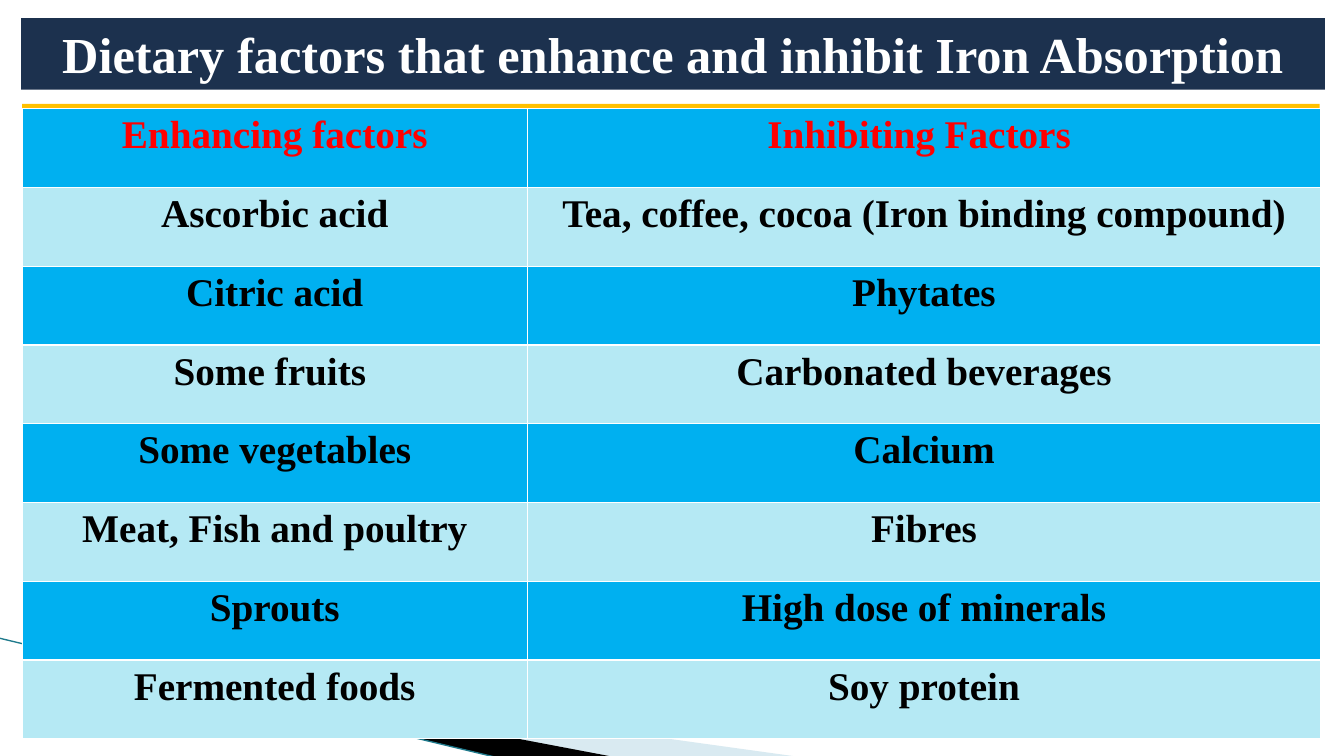
from pptx import Presentation
from pptx.dml.color import RGBColor
from pptx.enum.shapes import MSO_CONNECTOR, MSO_SHAPE
from pptx.enum.text import MSO_ANCHOR, MSO_AUTO_SIZE, PP_ALIGN
from pptx.oxml.ns import qn
from pptx.util import Inches, Pt
from lxml.etree import SubElement

FONT = "Times New Roman"
NAVY = RGBColor(0x1C, 0x31, 0x4E)
GOLD = RGBColor(0xFF, 0xC0, 0x00)
BLUE = RGBColor(0x00, 0xB0, 0xF0)
PALE = RGBColor(0xB5, 0xE9, 0xF4)
MIST = RGBColor(0xA0, 0xCB, 0xDC)
TEAL = RGBColor(0x1F, 0x7A, 0x8C)
RED = RGBColor(0xFF, 0x00, 0x00)
BLACK = RGBColor(0x00, 0x00, 0x00)
WHITE = RGBColor(0xFF, 0xFF, 0xFF)

TITLE = "Dietary factors that enhance and inhibit Iron Absorption"
FACTORS = [
    ("Enhancing factors", "Inhibiting Factors "),
    ("Ascorbic acid", "Tea, coffee, cocoa (Iron binding compound)"),
    ("Citric acid", "Phytates"),
    ("Some fruits ", "Carbonated beverages"),
    ("Some vegetables", "Calcium"),
    ("Meat, Fish and poultry", "Fibres"),
    ("Sprouts", "High dose of minerals"),
    ("Fermented foods", "Soy protein"),
]

# All places are percentages of the slide's width and height
TITLE_BOX = (1.58, 2.4, 97, 9.47)
GOLD_BOX = (1.65, 13.73, 96.55, 82.13)
TABLE_BOX = (1.65, 14.4, 96.62, 83.33)
COLUMNS = (37.58, 59.04)
WEDGES = [  # outline, colour, opacity in percent
    ([(5.48, 86.8), (59.49, 100.13), (45.61, 100.13), (5.48, 86.67)], MIST, 40),
    ([(5.33, 86.53), (45.69, 100.13), (37.21, 100.27), (5.4, 86.67)], BLACK, 100),
]
EDGE = ((-0.08, 84.4), (37.13, 100.27))

prs = Presentation()
prs.slide_width, prs.slide_height = Inches(13.33), Inches(7.5)
slide = prs.slides.add_slide(prs.slide_layouts[6])
shapes = slide.shapes


def place(*shares):
    """Turn alternating width and height percentages into lengths."""
    sides = (prs.slide_width, prs.slide_height)
    return [round(share * sides[i % 2] / 100) for i, share in enumerate(shares)]


def paint(sp, color, opacity=100):
    sp.shadow.inherit = False
    sp.line.fill.background()
    sp.fill.solid()
    sp.fill.fore_color.rgb = color
    if opacity < 100:
        clr = sp.fill._xPr.find(qn("a:solidFill"))[0]
        SubElement(clr, qn("a:alpha"), val=str(opacity * 1000))


def write(tf, text, size, color):
    p = tf.paragraphs[0]
    p.text = text
    p.alignment = PP_ALIGN.CENTER
    p.font.name, p.font.size, p.font.bold = FONT, Pt(size), True
    p.font.color.rgb = color


for outline, color, opacity in WEDGES:
    start, *rest = [place(*point) for point in outline]
    builder = shapes.build_freeform(*start)
    builder.add_line_segments(rest)
    paint(builder.convert_to_shape(), color, opacity)

edge = shapes.add_connector(MSO_CONNECTOR.STRAIGHT, *place(*EDGE[0], *EDGE[1]))
edge.line.color.rgb = TEAL
edge.line.width = Pt(0.95)
SubElement(edge._element.spPr, qn("a:effectLst"))

title = shapes.add_shape(MSO_SHAPE.RECTANGLE, *place(*TITLE_BOX))
paint(title, NAVY)
title.text_frame.word_wrap = True
title.text_frame.auto_size = MSO_AUTO_SIZE.SHAPE_TO_FIT_TEXT
title.text_frame.vertical_anchor = MSO_ANCHOR.TOP
write(title.text_frame, TITLE, 36, WHITE)

paint(shapes.add_shape(MSO_SHAPE.RECTANGLE, *place(*GOLD_BOX)), GOLD)

table = shapes.add_table(len(FACTORS), len(COLUMNS), *place(*TABLE_BOX)).table
for column, share in zip(table.columns, COLUMNS):
    column.width = place(share)[0]
for i, row in enumerate(FACTORS):
    for j, text in enumerate(row):
        cell = table.cell(i, j)
        cell.fill.solid()
        cell.fill.fore_color.rgb = PALE if i % 2 else BLUE
        write(cell.text_frame, text, 28, BLACK if i else RED)

prs.save("out.pptx")
